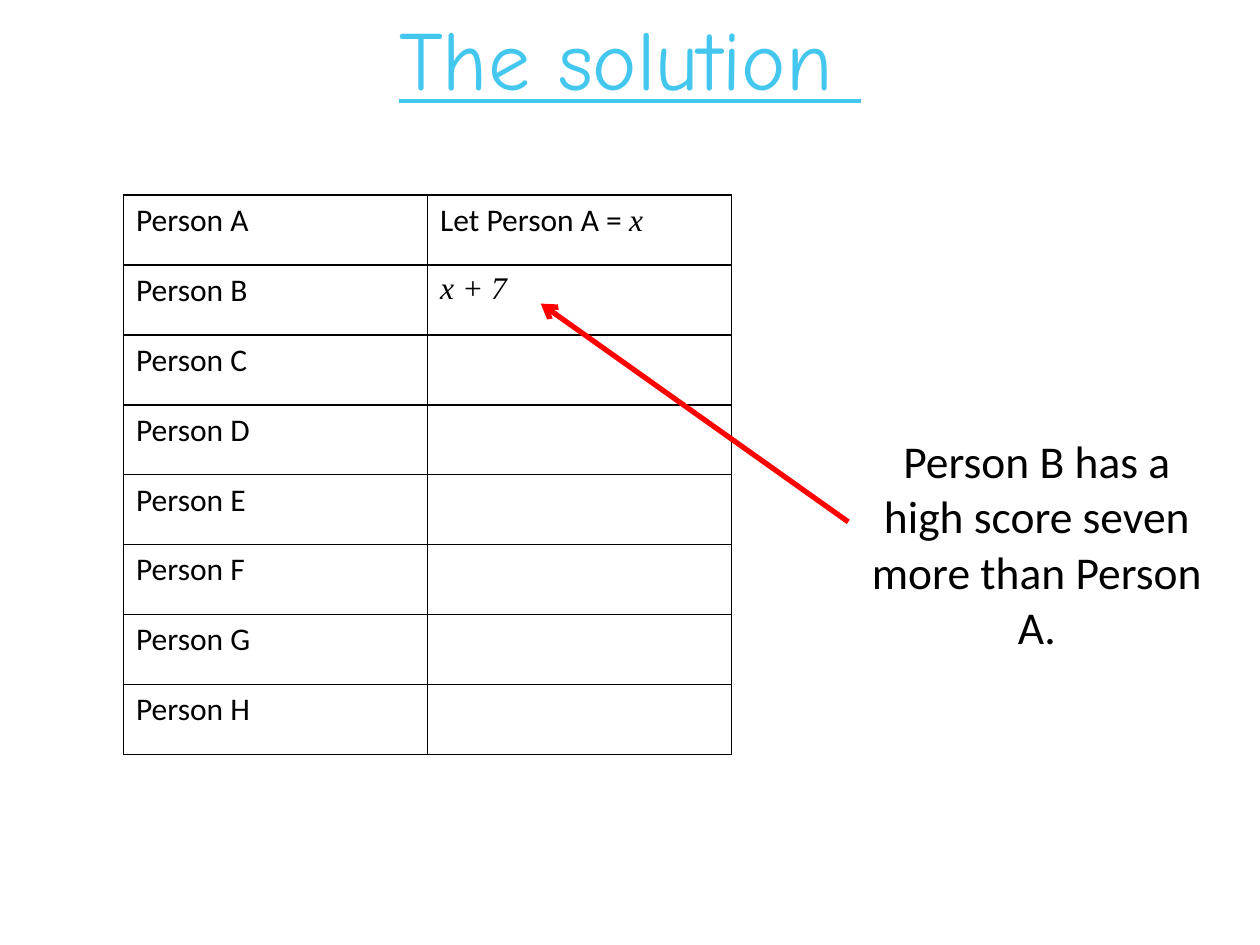
from lxml.etree import SubElement
from pptx import Presentation
from pptx.dml.color import RGBColor
from pptx.enum.shapes import MSO_CONNECTOR as Connector
from pptx.enum.text import MSO_ANCHOR as Anchor, PP_ALIGN as Align
from pptx.oxml import parse_xml
from pptx.oxml.ns import nsdecls, qn
from pptx.util import Cm, Pt

BLACK = RGBColor(0x00, 0x00, 0x00)
WHITE = RGBColor(0xFF, 0xFF, 0xFF)
RED = RGBColor(0xFF, 0x00, 0x00)
SKY = RGBColor(0x44, 0xC7, 0xEE)

TITLE = "The solution "
PEOPLE = "ABCDEFGH"
BODY = {"name": "Calibri", "size": Pt(18)}
ALGEBRA = {"name": "Times New Roman", "size": Pt(18), "italic": True}
TITLE_FONT = {"name": "Comic Neue", "size": Pt(48), "underline": True}
NOTE_FONT = {"name": "Calibri", "size": Pt(26)}
EXPRESSIONS = {
    "A": [("Let Person A = ", BODY), ("x", ALGEBRA)],
    "B": [("x + 7", ALGEBRA)],
}
NOTE = "Person B has a high score seven more than Person A."

SCORES_AT = (2.49, 3.93)
COLUMN_WIDTH, ROW_HEIGHT = 6.13, 1.41
NOTE_AT = (17.3, 8.73)
NOTE_SIZE = (7.21, 4.19)
ARROW = (17.1, 10.52, 10.9, 6.12)


def set_all(target, values):
    for attribute, value in values.items():
        setattr(target, attribute, value)


def write(paragraph, pieces, color=BLACK):
    for words, font in pieces:
        run = paragraph.add_run()
        run.text = words
        set_all(run.font, font)
        run.font.color.rgb = color


def style_cell(cell, border):
    cell.fill.solid()
    cell.fill.fore_color.rgb = WHITE
    properties = cell._tc.get_or_add_tcPr()
    for index, side in enumerate(("lnL", "lnR", "lnT", "lnB")):
        properties.insert(index, parse_xml(
            f'<a:{side} {nsdecls("a")} w="{Pt(1)}"><a:solidFill>'
            f'<a:srgbClr val="{border}"/></a:solidFill></a:{side}>'))


def add_grid(slide, rows, columns, at, cell_size, border):
    width, height = cell_size
    grid = slide.shapes.add_table(
        rows, columns, Cm(at[0]), Cm(at[1]),
        Cm(columns * width), Cm(rows * height)).table
    set_all(grid, {"first_row": False, "horz_banding": False})
    for column in grid.columns:
        column.width = Cm(width)
    for row in grid.rows:
        row.height = Cm(height)
    for cell in grid.iter_cells():
        style_cell(cell, border)
    return grid


def main():
    deck = Presentation()
    set_all(deck, {"slide_width": Cm(25.4), "slide_height": Cm(19.05)})
    slide = deck.slides.add_slide(deck.slide_layouts[6])

    title = slide.shapes.add_textbox(0, 0, deck.slide_width, Cm(2.29)).text_frame
    title.word_wrap = True
    title.paragraphs[0].alignment = Align.CENTER
    write(title.paragraphs[0], [(TITLE, TITLE_FONT)], SKY)

    scores = add_grid(slide, len(PEOPLE), 2, SCORES_AT,
                      (COLUMN_WIDTH, ROW_HEIGHT), BLACK)
    for row, person in enumerate(PEOPLE):
        name = [(f"Person {person}", BODY)]
        for column, pieces in enumerate((name, EXPRESSIONS.get(person, []))):
            write(scores.cell(row, column).text_frame.paragraphs[0], pieces)

    note = add_grid(slide, 1, 1, NOTE_AT, NOTE_SIZE, WHITE).cell(0, 0)
    set_all(note, {
        "vertical_anchor": Anchor.MIDDLE,
        "margin_left": Cm(0.03), "margin_right": Cm(0.03),
        "margin_top": Cm(0.03), "margin_bottom": 0,
    })
    note.text_frame.paragraphs[0].alignment = Align.CENTER
    write(note.text_frame.paragraphs[0], [(NOTE, NOTE_FONT)])

    arrow = slide.shapes.add_connector(Connector.STRAIGHT, *map(Cm, ARROW))
    arrow.line.width = Pt(3)
    arrow.line.color.rgb = RED
    SubElement(arrow.line._get_or_add_ln(), qn("a:tailEnd"), type="arrow")
    SubElement(arrow._element.spPr, qn("a:effectLst"))

    deck.save("out.pptx")


if __name__ == "__main__":
    main()
